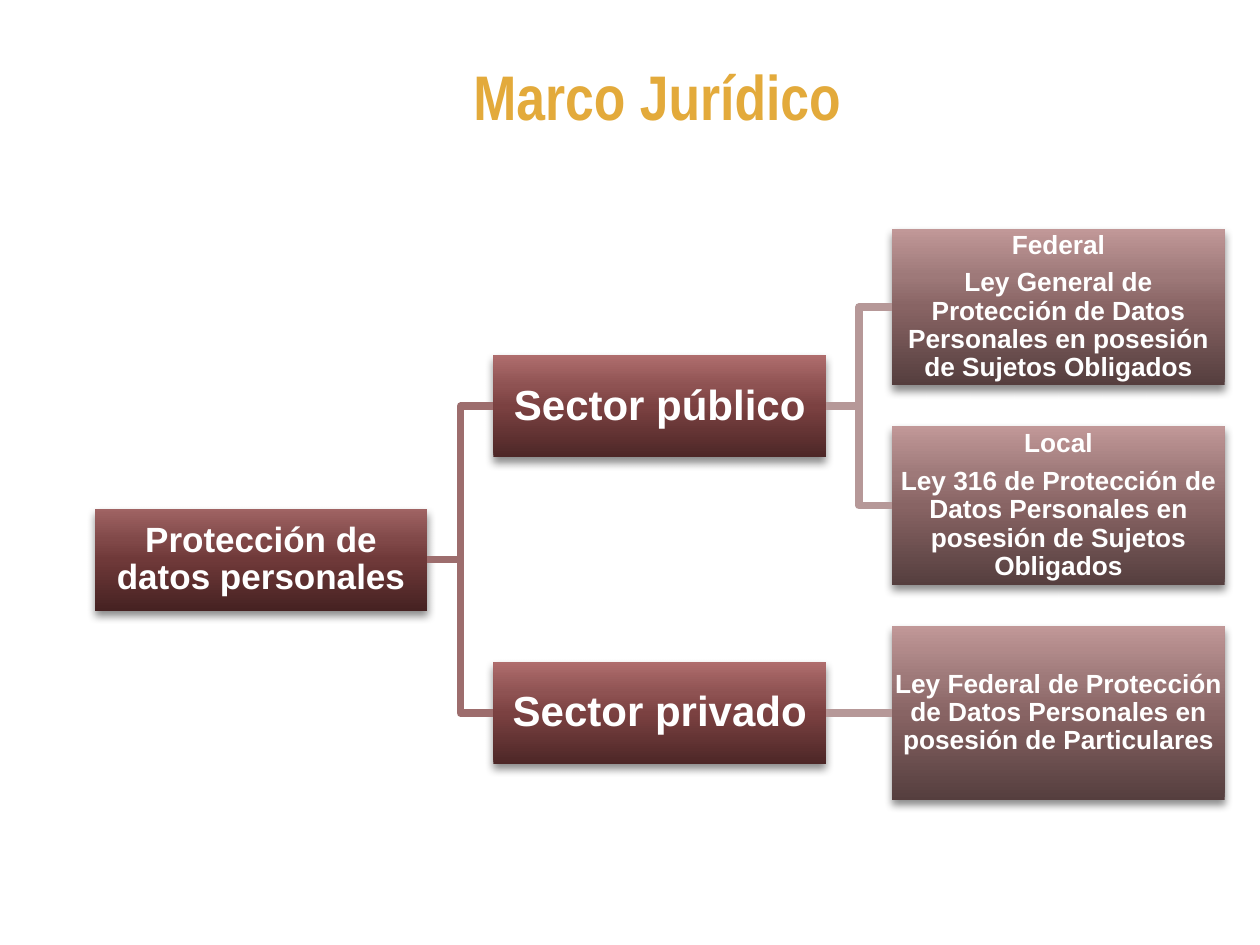
from dataclasses import dataclass

from lxml import etree
from pptx import Presentation
from pptx.dml.color import RGBColor
from pptx.enum.shapes import MSO_CONNECTOR, MSO_SHAPE
from pptx.enum.text import MSO_ANCHOR, PP_ALIGN
from pptx.oxml.ns import qn
from pptx.util import Pt

RECT = MSO_SHAPE.RECTANGLE
ELBOW = MSO_CONNECTOR.ELBOW
STRAIGHT = MSO_CONNECTOR.STRAIGHT
MIDDLE = MSO_ANCHOR.MIDDLE
CENTER = PP_ALIGN.CENTER
LEFT_SIDE, RIGHT_SIDE = 1, 3


@dataclass(frozen=True)
class Level:
    size: float
    inset: float
    stops: tuple[str, ...]
    line: str


@dataclass(frozen=True)
class Theme:
    font: str = "Arial"
    head_font: str = "Arial Narrow"
    head_size: float = 36
    head_color: str = "E3AA3B"
    text: str = "FFFFFF"
    shade: str = "000000"
    weight: float = 4.33
    levels: tuple[Level, ...] = (
        Level(20, 0.9, ("462222", "6F3939", "814949", "A06464"), "9D6D6D"),
        Level(24, 1.2, ("4D2727", "7B4141", "8E5252", "AF6D6D"), "B69898"),
        Level(15, 0.75, ("553E3E", "886464", "9E7979", "C19898"), "B69898"),
    )


@dataclass(frozen=True)
class Node:
    lines: tuple[str, ...]
    kids: tuple["Node", ...] = ()
    height: float = 58.3


THEME = Theme()
LEFT, TOP, WIDTH = 54.2, 130.9, 190
STEP, GAP = 227.8, 23.4
STOPS = (0, 50, 70, 100)

TREE = Node(("Protección de datos personales",), (
    Node(("Sector público",), (
        Node(("Federal", "Ley General de Protección de Datos Personales "
              "en posesión de Sujetos Obligados"), height=89.2),
        Node(("Local", "Ley 316 de Protección de Datos Personales "
              "en posesión de Sujetos Obligados"), height=90.8),
    )),
    Node(("Sector privado",), (
        Node(("Ley Federal de Protección de Datos Personales "
              "en posesión de Particulares",), height=99.4),
    )),
))


def write(shape, lines: tuple[str, ...], *, size: float, color: str, font: str,
          inset: float | None = None, lead: float = 1, after: float = 0) -> None:
    frame = shape.text_frame
    frame.word_wrap = True
    frame.vertical_anchor = MIDDLE
    if inset is not None:
        frame.margin_left = frame.margin_right = Pt(inset)
        frame.margin_top = frame.margin_bottom = Pt(inset)
    for i, line in enumerate(lines):
        para = frame.paragraphs[0] if i == 0 else frame.add_paragraph()
        para.alignment = CENTER
        para.line_spacing = lead
        para.space_after = Pt(after)
        run = para.add_run()
        run.text = line
        run.font.name = font
        run.font.size = Pt(size)
        run.font.bold = True
        run.font.color.rgb = RGBColor.from_string(color)


def tint(shape, colors: tuple[str, ...]) -> None:
    shape.fill.gradient()
    shape.fill.gradient_angle = 90
    stops = next(shape.element.iter(qn("a:gsLst")))
    for old in list(stops):
        stops.remove(old)
    for pos, color in zip(STOPS, colors):
        stop = etree.SubElement(stops, qn("a:gs"), pos=str(pos * 1000))
        etree.SubElement(stop, qn("a:srgbClr"), val=color)


def shade(shape) -> None:
    shape.shadow.inherit = False
    effects = next(shape.element.iter(qn("a:effectLst")))
    outer = etree.SubElement(effects, qn("a:outerShdw"), blurRad=str(Pt(5)),
                             dist=str(Pt(3)), dir="5400000", rotWithShape="0")
    color = etree.SubElement(outer, qn("a:srgbClr"), val=THEME.shade)
    etree.SubElement(color, qn("a:alpha"), val="45000")


def draw_box(slide, node: Node, depth: int, mid: float):
    level = THEME.levels[depth]
    box = slide.shapes.add_shape(RECT, Pt(LEFT + depth * STEP), Pt(mid - node.height / 2),
                                 Pt(WIDTH), Pt(node.height))
    tint(box, level.stops)
    box.line.fill.background()
    shade(box)
    write(box, node.lines, size=level.size, color=THEME.text, font=THEME.font,
          inset=level.inset, lead=0.9, after=level.size * 0.35)
    return box


def join(slide, start, end, level: Level, kind) -> None:
    link = slide.shapes.add_connector(kind, 0, 0, 0, 0)
    link.begin_connect(start, RIGHT_SIDE)
    link.end_connect(end, LEFT_SIDE)
    link.line.color.rgb = RGBColor.from_string(level.line)
    link.line.width = Pt(THEME.weight)
    etree.SubElement(link.element.spPr, qn("a:effectLst"))


def draw_tree(slide, node: Node, depth: int, top: float):
    kids, mids, low = [], [], top
    for kid in node.kids:
        box, mid, low = draw_tree(slide, kid, depth + 1, low)
        kids.append(box)
        mids.append(mid)
    if kids:
        mid = (mids[0] + mids[-1]) / 2
    else:
        mid = top + node.height / 2
        low = top + node.height + GAP
    box = draw_box(slide, node, depth, mid)
    kind = STRAIGHT if len(kids) == 1 else ELBOW
    for kid in kids:
        join(slide, box, kid, THEME.levels[depth], kind)
    return box, mid, low


def main() -> None:
    deck = Presentation()
    deck.slide_width, deck.slide_height = Pt(720), Pt(540)
    slide = deck.slides.add_slide(deck.slide_layouts[6])
    draw_tree(slide, TREE, 0, TOP)
    title = slide.shapes.add_textbox(Pt(114.5), Pt(27.4), Pt(522), Pt(54.7))
    write(title, ("Marco Jurídico",), size=THEME.head_size,
          color=THEME.head_color, font=THEME.head_font)
    deck.save("out.pptx")


if __name__ == "__main__":
    main()
